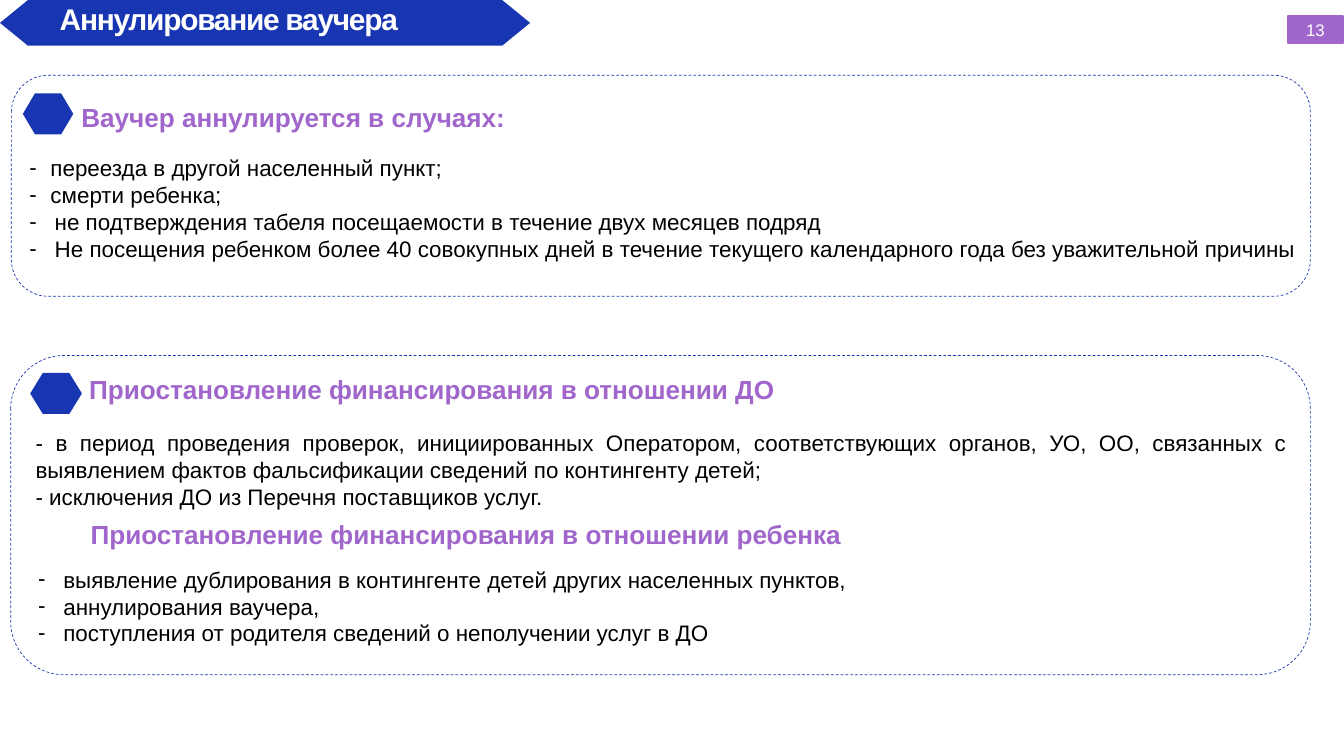
from dataclasses import dataclass

from lxml.etree import SubElement
from pptx import Presentation
from pptx.dml.color import RGBColor
from pptx.enum.dml import MSO_LINE
from pptx.enum.shapes import MSO_SHAPE
from pptx.enum.text import MSO_ANCHOR, MSO_AUTO_SIZE, PP_ALIGN
from pptx.oxml.ns import qn
from pptx.shapes.autoshape import Shape
from pptx.slide import Slide
from pptx.text.text import TextFrame
from pptx.util import Pt

BLUE, PURPLE, WHITE, BLACK = "1836B2", "A066CB", "FFFFFF", "000000"


@dataclass
class Box:
    x: float
    y: float
    w: float
    h: float


@dataclass
class Hexagon:
    box: Box
    inset: float


@dataclass
class Para:
    text: str
    indent: float = 0
    align: PP_ALIGN = PP_ALIGN.LEFT


@dataclass
class Style:
    size: float
    color: str
    bold: bool = False
    spacing: float = 0


@dataclass
class Block:
    box: Box
    paras: list[Para]
    style: Style
    wrap: bool = True
    margin: bool = True


HEADING = Style(28, PURPLE, bold=True)
BODY = Style(24, BLACK)

PANELS = [Box(12.2, 80.6, 1391.8, 236.9), Box(11.5, 380.9, 1392.5, 342)]
HEXAGONS = [
    Hexagon(Box(0, 0, 568, 49), 30),
    Hexagon(Box(24.5, 100, 54, 44), 13),
    Hexagon(Box(32.4, 399.6, 55.4, 44), 13.5),
]


def heading(text: str, x: float, y: float, w: float) -> Block:
    return Block(Box(x, y, w, 41), [Para(text)], HEADING, wrap=False)


BLOCKS = [
    Block(Box(64, 0.7, 516, 39), [Para("Аннулирование ваучера")],
          Style(32, WHITE, bold=True, spacing=-1.4), margin=False),
    heading("Ваучер аннулируется в случаях:", 80, 105.1, 474.5),
    Block(Box(24.5, 162, 1379.5, 124), [
        Para("переезда в другой населенный пункт;", 22.5),
        Para("смерти ребенка;", 22.5),
        Para("не подтверждения табеля посещаемости в течение двух месяцев подряд", 27),
        Para("Не посещения ребенком более 40 совокупных дней в течение текущего "
             "календарного года без уважительной причины", 27),
    ], BODY),
    heading("Приостановление финансирования в отношении ДО", 88.5, 396, 778.3),
    Block(Box(31, 456.5, 1354.3, 94.3), [
        Para("- в период проведения проверок, инициированных Оператором, "
             "соответствующих органов, УО, ОО, связанных с выявлением фактов "
             "фальсификации сведений по контингенту детей;", align=PP_ALIGN.JUSTIFY),
        Para("- исключения ДО из Перечня поставщиков услуг.", align=PP_ALIGN.JUSTIFY),
    ], BODY),
    heading("Приостановление финансирования в отношении ребенка", 90, 552.2, 828),
    Block(Box(33.8, 602.6, 1337, 94.3), [
        Para("выявление дублирования в контингенте детей других населенных пунктов,", 27),
        Para("аннулирования ваучера,", 27),
        Para("поступления от родителя сведений о неполучении услуг в ДО", 27),
    ], BODY),
]


def rgb(color: str) -> RGBColor:
    return RGBColor.from_string(color)


def place(box: Box) -> tuple[Pt, Pt, Pt, Pt]:
    return Pt(box.x), Pt(box.y), Pt(box.w), Pt(box.h)


def fill_shape(sp: Shape, color: str) -> None:
    sp.shadow.inherit = False
    sp.fill.solid()
    sp.fill.fore_color.rgb = rgb(color)


def add_hexagon(s: Slide, hexagon: Hexagon) -> None:
    b, left = hexagon.box, hexagon.box.x + hexagon.inset
    right, middle = b.x + b.w - hexagon.inset, b.y + b.h / 2
    points = [(right, b.y), (b.x + b.w, middle), (right, b.y + b.h),
              (left, b.y + b.h), (b.x, middle)]
    builder = s.shapes.build_freeform(Pt(left), Pt(b.y))
    builder.add_line_segments([(Pt(x), Pt(y)) for x, y in points], close=True)
    sp = builder.convert_to_shape()
    fill_shape(sp, BLUE)
    sp.line.fill.background()


def add_panel(s: Slide, box: Box) -> None:
    sp = s.shapes.add_shape(MSO_SHAPE.ROUNDED_RECTANGLE, *place(box))
    sp.shadow.inherit = False
    sp.fill.background()
    sp.line.color.rgb = rgb(BLUE)
    sp.line.width = Pt(0.75)
    sp.line.dash_style = MSO_LINE.DASH


def write(tf: TextFrame, paras: list[Para], style: Style) -> None:
    for i, para in enumerate(paras):
        p = tf.paragraphs[0] if i == 0 else tf.add_paragraph()
        p.alignment = para.align
        if para.indent:
            pPr = p._p.get_or_add_pPr()
            pPr.set("marL", str(Pt(para.indent)))
            pPr.set("indent", str(-Pt(para.indent)))
            SubElement(pPr, qn("a:buFont"), typeface="Arial")
            SubElement(pPr, qn("a:buChar"), char="-")
        r = p.add_run()
        r.text = para.text
        r.font.name = "Arial"
        r.font.size = Pt(style.size)
        r.font.bold = style.bold
        r.font.color.rgb = rgb(style.color)
        if style.spacing:
            r._r.get_or_add_rPr().set("spc", str(round(style.spacing * 100)))


def add_block(s: Slide, block: Block) -> None:
    tf = s.shapes.add_textbox(*place(block.box)).text_frame
    tf.word_wrap = block.wrap
    tf.auto_size = MSO_AUTO_SIZE.SHAPE_TO_FIT_TEXT
    if not block.margin:
        tf.margin_left = tf.margin_top = tf.margin_right = tf.margin_bottom = Pt(0)
    write(tf, block.paras, block.style)


def add_page_number(s: Slide, box: Box, number: str) -> None:
    sp = s.shapes.add_shape(MSO_SHAPE.RECTANGLE, *place(box))
    fill_shape(sp, PURPLE)
    sp.line.color.rgb = rgb(PURPLE)
    sp.line.width = Pt(2)
    sp.text_frame.vertical_anchor = MSO_ANCHOR.MIDDLE
    write(sp.text_frame, [Para(number, align=PP_ALIGN.CENTER)], Style(18, WHITE))


def main() -> None:
    prs = Presentation()
    prs.slide_width, prs.slide_height = Pt(1440), Pt(810)
    s = prs.slides.add_slide(prs.slide_layouts[6])
    for panel in PANELS:
        add_panel(s, panel)
    for hexagon in HEXAGONS:
        add_hexagon(s, hexagon)
    for block in BLOCKS:
        add_block(s, block)
    add_page_number(s, Box(1380.2, 17.3, 58.3, 28.8), "13")
    prs.save("out.pptx")


if __name__ == "__main__":
    main()
